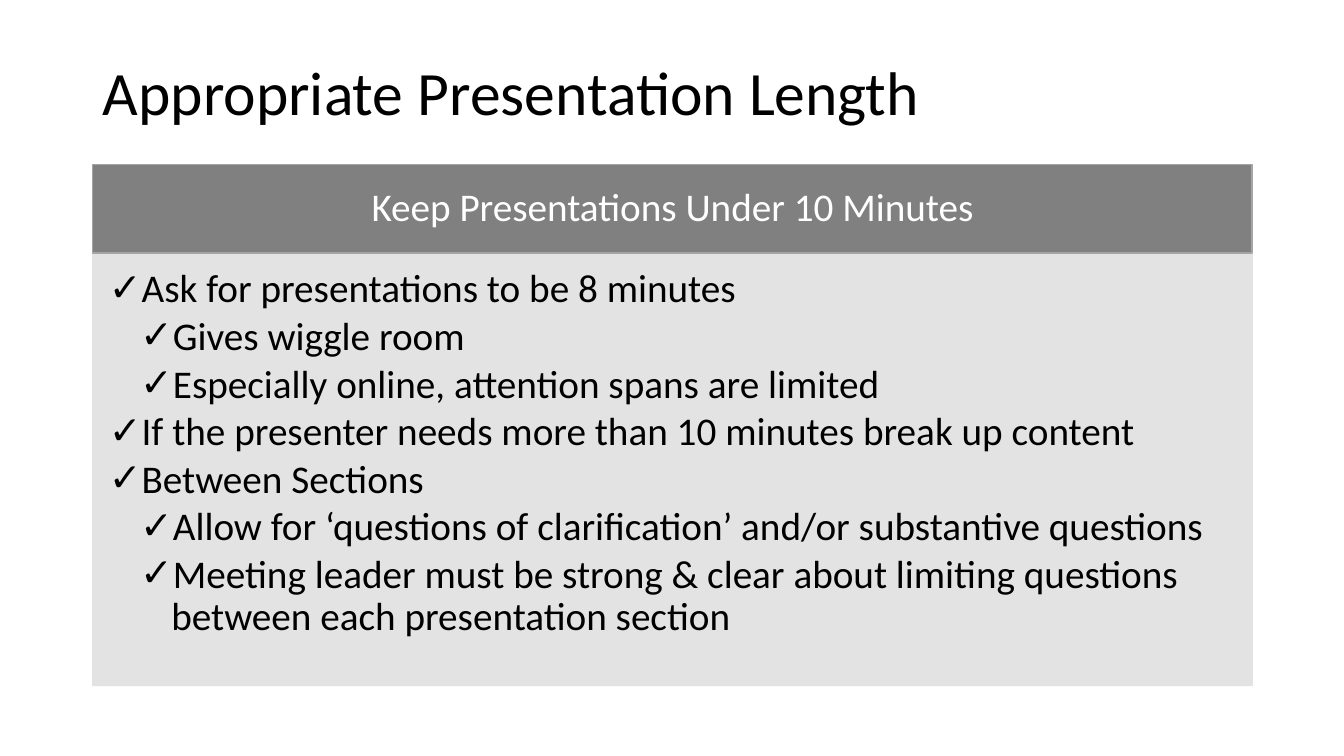
from lxml import etree
from pptx import Presentation
from pptx import util as u
from pptx.dml.color import RGBColor
from pptx.enum import shapes, text
from pptx.oxml import ns

BLACK = RGBColor(0x00, 0x00, 0x00)
WHITE = RGBColor(0xFF, 0xFF, 0xFF)
GRAY = RGBColor(0x80, 0x80, 0x80)
EDGE = RGBColor(0xA5, 0xA5, 0xA5)
PALE = RGBColor(0xE1, 0xE1, 0xE1)

LEFT, WIDE = 0.92, 11.5
HANG = 0.31
ITEMS = [
    (0, "Ask for presentations to be 8 minutes"),
    (1, "Gives wiggle room"),
    (1, "Especially online, attention spans are limited"),
    (0, "If the presenter needs more than 10 minutes break up content"),
    (0, "Between Sections"),
    (1, "Allow for ‘questions of clarification’ and/or substantive questions"),
    (1, "Meeting leader must be strong & clear about limiting questions "
        "between each presentation section"),
]


def write(para, words, size=28, color=BLACK, align=text.PP_ALIGN.LEFT, after=0):
    run = para.add_run()
    run.text = words
    run.font.name = "Calibri"
    run.font.size = u.Pt(size)
    run.font.color.rgb = color
    para.alignment = align
    para.line_spacing = 0.9
    para.space_before = u.Pt(0)
    para.space_after = u.Pt(after)


class Deck:
    def __init__(self):
        self.prs = Presentation()
        self.prs.slide_width = u.Inches(13.33)
        self.prs.slide_height = u.Inches(7.5)
        self.slide = self.prs.slides.add_slide(self.prs.slide_layouts[1])

    def place(self, shape, top, high):
        shape.left, shape.top = u.Inches(LEFT), u.Inches(top)
        shape.width, shape.height = u.Inches(WIDE), u.Inches(high)

    def frame(self, shape, anchor, inset):
        body = shape.text_frame
        body.word_wrap = True
        body.auto_size = text.MSO_AUTO_SIZE.NONE
        body.vertical_anchor = anchor
        (body.margin_left, body.margin_top,
         body.margin_right, body.margin_bottom) = map(u.Inches, inset)
        return body

    def paint(self, shape, fill, line, alpha=100):
        shape.fill.solid()
        shape.fill.fore_color.rgb = fill
        shape.line.color.rgb = line
        shape.line.width = u.Pt(1)
        if alpha < 100:
            for color in shape.element.spPr.iter(ns.qn("a:srgbClr")):
                etree.SubElement(color, ns.qn("a:alpha"), val=str(alpha * 1000))

    def title(self, words, top, high):
        shape = self.slide.shapes.title
        self.place(shape, top, high)
        body = self.frame(shape, text.MSO_ANCHOR.MIDDLE, (0.1, 0.05, 0.1, 0.05))
        write(body.paragraphs[0], words, size=44)

    def banner(self, words, top, high):
        shape = self.slide.shapes.add_shape(
            shapes.MSO_SHAPE.RECTANGLE, 0, 0, 0, 0)
        self.place(shape, top, high)
        shape.shadow.inherit = False
        self.paint(shape, GRAY, EDGE)
        body = self.frame(shape, text.MSO_ANCHOR.MIDDLE, (0.22, 0.12, 0.22, 0.12))
        write(body.paragraphs[0], words, color=WHITE, align=text.PP_ALIGN.CENTER)

    def checks(self, items, top, high):
        shape = self.slide.placeholders[1]
        self.place(shape, top, high)
        self.paint(shape, PALE, PALE, alpha=90)
        body = self.frame(shape, text.MSO_ANCHOR.TOP, (0.16, 0.16, 0.22, 0.24))
        for n, (level, words) in enumerate(items):
            para = body.add_paragraph() if n else body.paragraphs[0]
            para.level = level
            write(para, words, after=3.7)
            props = para._p.get_or_add_pPr()
            props.set("marL", str(u.Inches(HANG * (level + 1))))
            props.set("indent", str(u.Inches(-HANG)))
            etree.SubElement(props, ns.qn("a:buChar"), char="✓")

    def save(self):
        self.prs.save("out.pptx")


def main():
    deck = Deck()
    deck.title("Appropriate Presentation Length", 0.4, 1.1)
    deck.checks(ITEMS, 2.51, 4.29)
    deck.banner("Keep Presentations Under 10 Minutes", 1.63, 0.88)
    deck.save()


if __name__ == "__main__":
    main()
